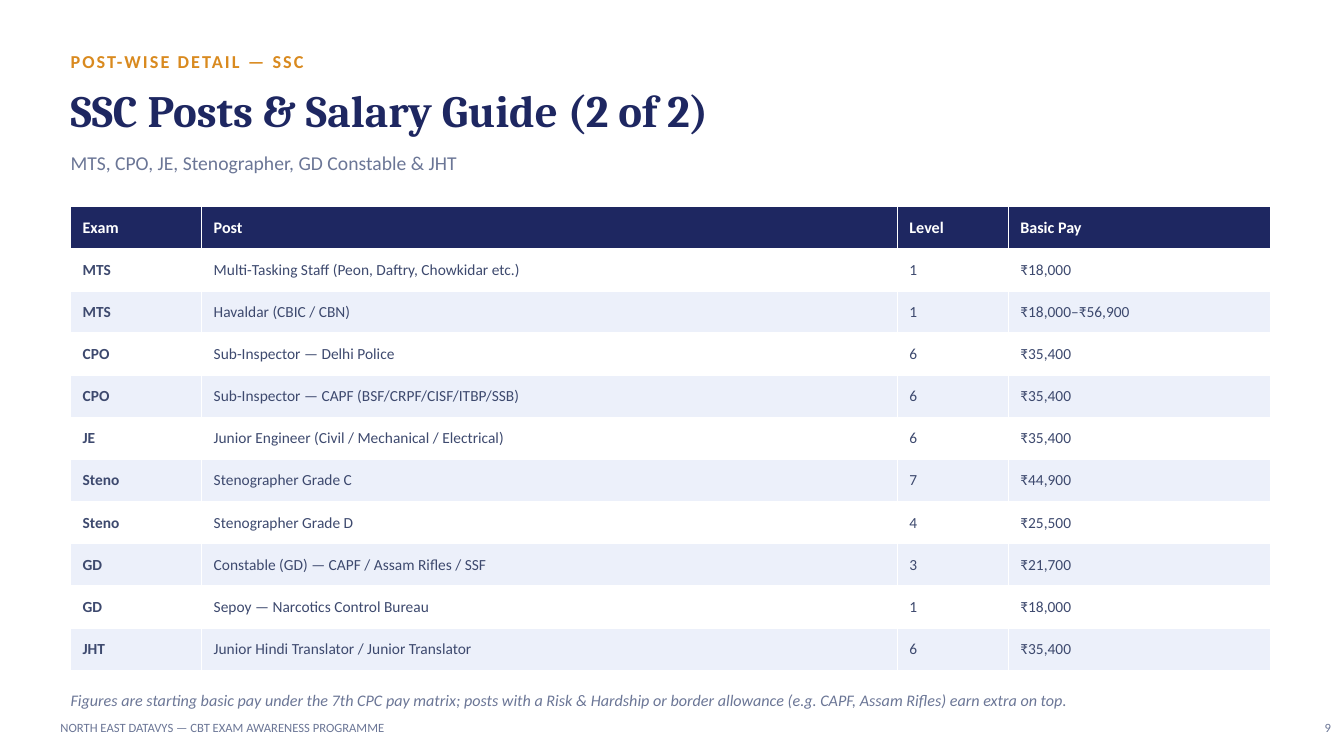
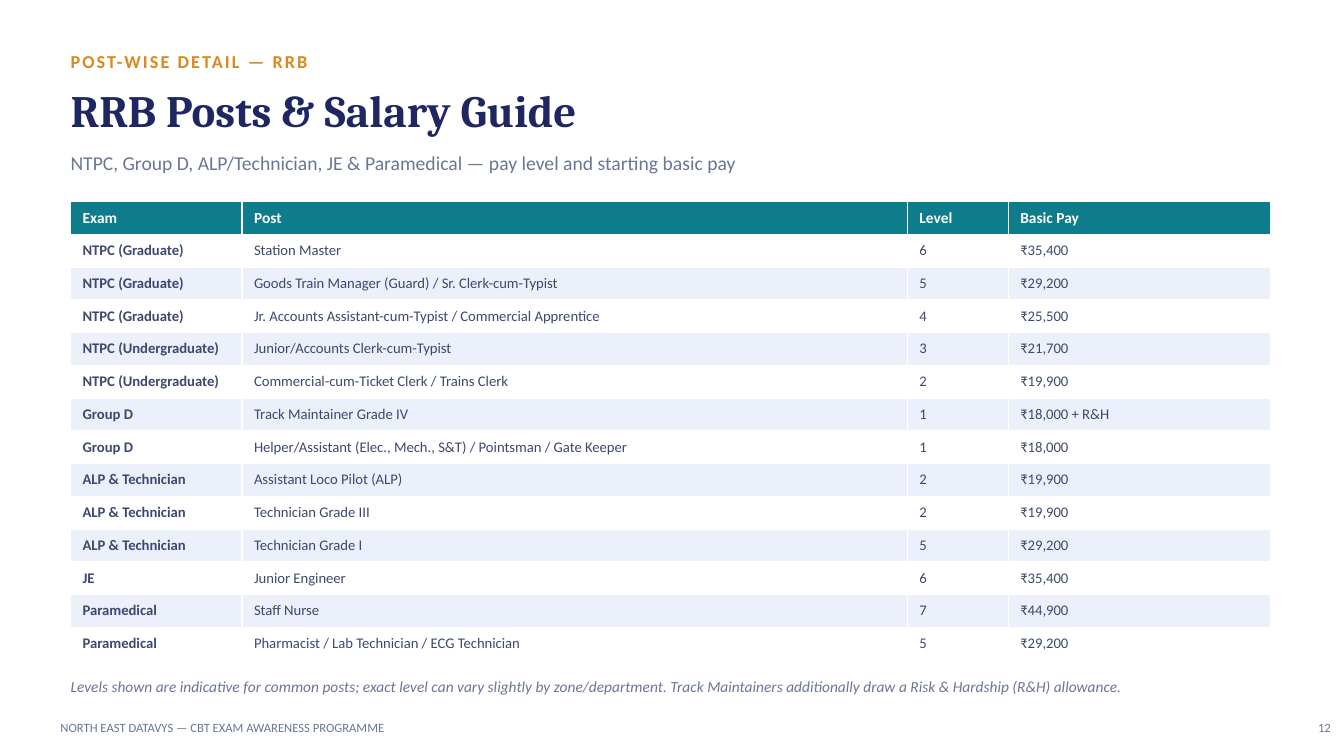
from pptx import Presentation
from pptx.dml.color import RGBColor
from pptx.enum.text import MSO_ANCHOR, MSO_AUTO_SIZE, PP_ALIGN
from pptx.util import Pt

PX = 9144
HUES = {
    "navy": "1E2761",
    "teal": "0F7C8C",
    "gold": "D98A1F",
    "gray": "6B7696",
    "ink": "3D496E",
    "band": "ECF0FA",
    "white": "FFFFFF",
}
SANS, SERIF = "Calibri", "Cambria"
LEFT, WIDE = 70, 1190
FOOT = "NORTH EAST DATAVYS — CBT EXAM AWARENESS PROGRAMME"
HEADS = ("Exam", "Post", "Level", "Basic Pay")

SSC = [
    ("MTS", "Multi-Tasking Staff (Peon, Daftry, Chowkidar etc.)", "1", "₹18,000"),
    ("MTS", "Havaldar (CBIC / CBN)", "1", "₹18,000–₹56,900"),
    ("CPO", "Sub-Inspector — Delhi Police", "6", "₹35,400"),
    ("CPO", "Sub-Inspector — CAPF (BSF/CRPF/CISF/ITBP/SSB)", "6", "₹35,400"),
    ("JE", "Junior Engineer (Civil / Mechanical / Electrical)", "6", "₹35,400"),
    ("Steno", "Stenographer Grade C", "7", "₹44,900"),
    ("Steno", "Stenographer Grade D", "4", "₹25,500"),
    ("GD", "Constable (GD) — CAPF / Assam Rifles / SSF", "3", "₹21,700"),
    ("GD", "Sepoy — Narcotics Control Bureau", "1", "₹18,000"),
    ("JHT", "Junior Hindi Translator / Junior Translator", "6", "₹35,400"),
]

RRB = [
    ("NTPC (Graduate)", "Station Master", "6", "₹35,400"),
    ("NTPC (Graduate)", "Goods Train Manager (Guard) / Sr. Clerk-cum-Typist", "5", "₹29,200"),
    ("NTPC (Graduate)", "Jr. Accounts Assistant-cum-Typist / Commercial Apprentice", "4", "₹25,500"),
    ("NTPC (Undergraduate)", "Junior/Accounts Clerk-cum-Typist", "3", "₹21,700"),
    ("NTPC (Undergraduate)", "Commercial-cum-Ticket Clerk / Trains Clerk", "2", "₹19,900"),
    ("Group D", "Track Maintainer Grade IV", "1", "₹18,000 + R&H"),
    ("Group D", "Helper/Assistant (Elec., Mech., S&T) / Pointsman / Gate Keeper", "1", "₹18,000"),
    ("ALP & Technician", "Assistant Loco Pilot (ALP)", "2", "₹19,900"),
    ("ALP & Technician", "Technician Grade III", "2", "₹19,900"),
    ("ALP & Technician", "Technician Grade I", "5", "₹29,200"),
    ("JE", "Junior Engineer", "6", "₹35,400"),
    ("Paramedical", "Staff Nurse", "7", "₹44,900"),
    ("Paramedical", "Pharmacist / Lab Technician / ECG Technician", "5", "₹29,200"),
]


def px(*nums):
    return [num * PX for num in nums]


def tint(hue):
    return RGBColor.from_string(HUES[hue])


class Deck:
    def __init__(self):
        self.show = Presentation()
        self.show.slide_width, self.show.slide_height = px(1333, 750)
        self.slide = None

    def style(self, para, size, hue, face=SANS, bold=False, slant=False):
        font = para.font
        font.name, font.size = face, Pt(size)
        font.bold, font.italic = bold, slant
        font.color.rgb = tint(hue)

    def fit(self, shape, text, align=PP_ALIGN.LEFT):
        frame = shape.text_frame
        frame.word_wrap = True
        frame.auto_size = MSO_AUTO_SIZE.SHAPE_TO_FIT_TEXT
        frame.vertical_anchor = MSO_ANCHOR.TOP
        frame.margin_left = frame.margin_right = 0
        frame.margin_top = frame.margin_bottom = 0
        frame.text = text
        para = frame.paragraphs[0]
        para.alignment = align
        return para

    def text(self, box, text, size, hue="gray", align=PP_ALIGN.LEFT, **look):
        shape = self.slide.shapes.add_textbox(*px(*box))
        para = self.fit(shape, text, align)
        self.style(para, size, hue, **look)
        return para

    def title(self, text):
        shape = self.slide.shapes.title
        shape.left, shape.top, shape.width, shape.height = px(LEFT, 82, WIDE, 90)
        self.style(self.fit(shape, text), 32, "navy", SERIF, bold=True)

    def page(self, kind, title, sub, num):
        self.slide = self.show.slides.add_slide(self.show.slide_layouts[5])
        self.title(title)
        label = self.text((LEFT, 50, 1000, 35), f"POST-WISE DETAIL — {kind}", 13, "gold", bold=True)
        label._p.pPr.defRPr.set("spc", "150")
        self.text((LEFT, 150, WIDE, 50), sub, 14)
        self.text((60, 714, 800, 30), FOOT, 9)
        self.text((1280, 714, 40, 30), str(num), 9, align=PP_ALIGN.RIGHT)

    def cell(self, cell, text, fill, size, hue, bold):
        cell.text = text
        cell.fill.solid()
        cell.fill.fore_color.rgb = tint(fill)
        cell.vertical_anchor = MSO_ANCHOR.MIDDLE
        cell.margin_left = cell.margin_right = 12 * PX
        cell.margin_top = cell.margin_bottom = 6 * PX
        self.style(cell.text_frame.paragraphs[0], size, hue, bold=bold)

    def table(self, top, high, cols, rows, hue, size):
        box = px(LEFT, top, WIDE, high)
        grid = self.slide.shapes.add_table(len(rows) + 1, len(cols), *box).table
        for col, wide in zip(grid.columns, px(*cols)):
            col.width = wide
        for r, row in enumerate([HEADS, *rows]):
            head = r == 0
            fill = hue if head else "white" if r % 2 else "band"
            for c, text in enumerate(row):
                self.cell(grid.cell(r, c), text, fill, size + 0.5 * head,
                          "white" if head else "ink", head or c == 0)

    def note(self, top, high, text, size):
        self.text((LEFT, top, WIDE, high), text, size, slant=True)


def main():
    deck = Deck()

    deck.page("SSC", "SSC Posts & Salary Guide (2 of 2)",
              "MTS, CPO, JE, Stenographer, GD Constable & JHT", 9)
    deck.table(205, 460, (130, 690, 110, 260), SSC, "navy", 11)
    deck.note(685, 40, "Figures are starting basic pay under the 7th CPC pay matrix; posts with a "
              "Risk & Hardship or border allowance (e.g. CAPF, Assam Rifles) earn extra on top.", 11.5)

    deck.page("RRB", "RRB Posts & Salary Guide",
              "NTPC, Group D, ALP/Technician, JE & Paramedical — pay level and starting basic pay", 12)
    deck.table(200, 455, (170, 660, 100, 260), RRB, "teal", 10.5)
    deck.note(672, 35, "Levels shown are indicative for common posts; exact level can vary slightly by "
              "zone/department. Track Maintainers additionally draw a Risk & Hardship (R&H) allowance.", 11)

    deck.show.save("out.pptx")


if __name__ == "__main__":
    main()
